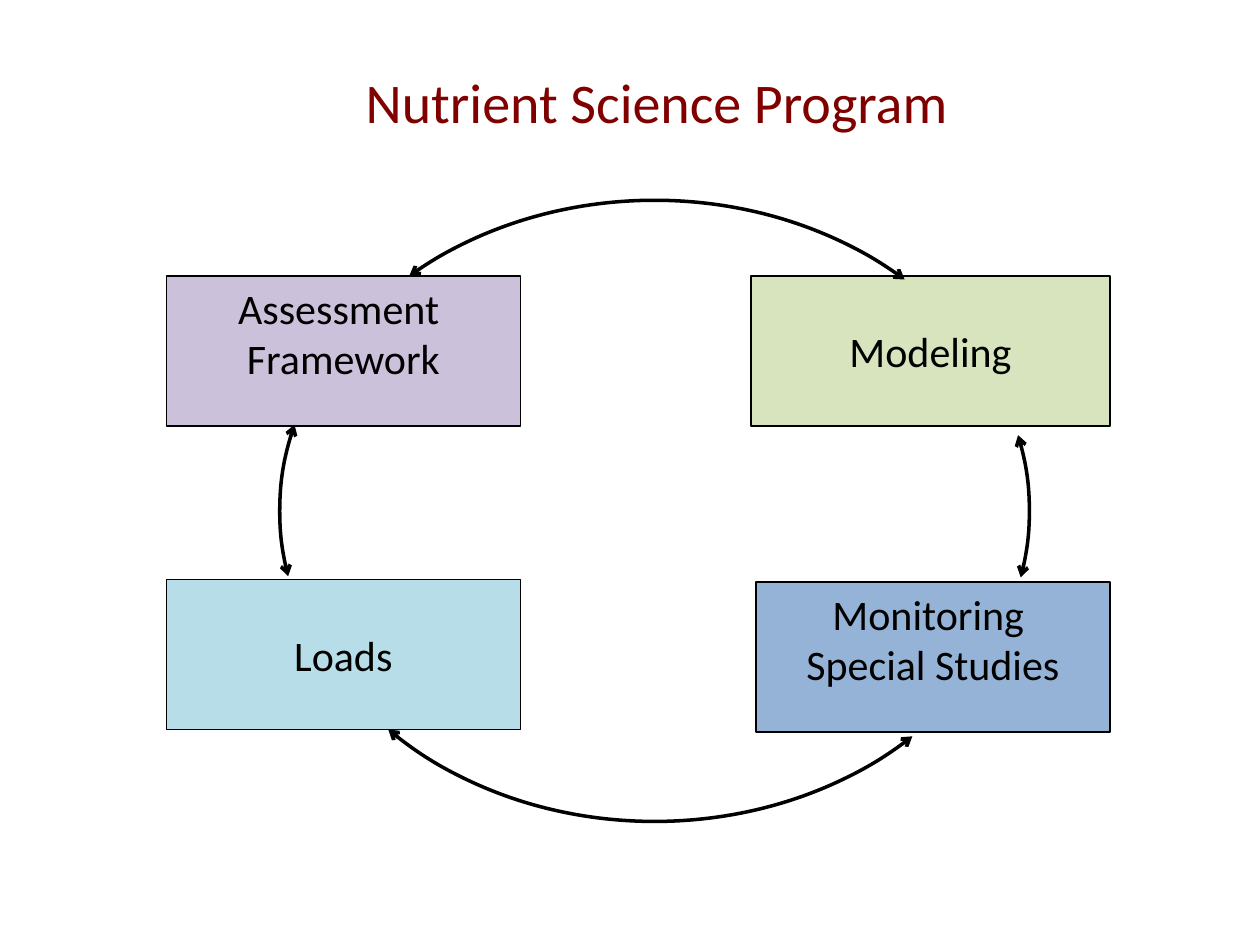
from lxml import etree
from pptx import Presentation
from pptx import util as u
from pptx.dml.color import RGBColor
from pptx.enum import shapes, text
from pptx.oxml import ns

BLACK = RGBColor(0x00, 0x00, 0x00)
MAROON = RGBColor(0x80, 0x00, 0x00)
GREEN = RGBColor(0xD7, 0xE4, 0xBD)
BLUE = RGBColor(0x95, 0xB3, 0xD7)
PURPLE = RGBColor(0xCC, 0xC1, 0xDA)
AQUA = RGBColor(0xB7, 0xDE, 0xE8)

TOP, MIDDLE = text.MSO_ANCHOR.TOP, text.MSO_ANCHOR.MIDDLE
CYCLE = (2.22, 1.59, 5.95, 4.93)
ARROW_ANGLES = [(223.74, 317.22), (348.23, 10.28), (169.89, 193.47), (41.17, 140.61)]


class SlideBuilder:
    """Holds the text style and the current slide, and draws each kind of element."""

    def __init__(self, slide, font="Calibri"):
        self.slide = slide
        self.font = font

    def apply(self, target, values):
        for name, value in values.items():
            setattr(target, name, value)

    def fill_text(self, shape, lines, size, color, anchor=TOP, space_before=0):
        frame = shape.text_frame
        self.apply(frame, {"word_wrap": True, "vertical_anchor": anchor})
        frame.text = "\n".join(lines)
        for paragraph in frame.paragraphs:
            self.apply(paragraph, {"alignment": text.PP_ALIGN.CENTER,
                                   "space_before": u.Pt(space_before)})
            for run in paragraph.runs:
                self.apply(run.font, {"name": self.font, "size": u.Pt(size)})
                run.font.color.rgb = color

    def title(self, box, line):
        shape = self.slide.shapes.add_textbox(*map(u.Inches, box))
        self.fill_text(shape, [line], 32, MAROON)

    def outlined(self, kind, box, width):
        shape = self.slide.shapes.add_shape(kind, *map(u.Inches, box))
        shape.shadow.inherit = False
        shape.line.color.rgb = BLACK
        shape.line.width = u.Pt(width)
        return shape

    def topic(self, box, fill, lines, **layout):
        shape = self.outlined(shapes.MSO_SHAPE.RECTANGLE, box, 0.75)
        shape.fill.solid()
        shape.fill.fore_color.rgb = fill
        self.fill_text(shape, lines, 24, BLACK, **layout)

    def arc_arrow(self, box, angles):
        shape = self.outlined(shapes.MSO_SHAPE.ARC, box, 2)
        shape.fill.background()
        for index, degrees in enumerate(angles):
            shape.adjustments[index] = degrees * 0.6
        line = shape._element.spPr.find(ns.qn("a:ln"))
        for end in ("a:headEnd", "a:tailEnd"):
            etree.SubElement(line, ns.qn(end), type="arrow")


def main():
    presentation = Presentation()
    presentation.slide_width = u.Inches(10)
    presentation.slide_height = u.Inches(7.5)
    builder = SlideBuilder(presentation.slides.add_slide(presentation.slide_layouts[6]))

    builder.title((2.36, 0.49, 5.71, 0.64), "Nutrient Science Program")
    builder.topic((5.96, 2.19, 2.85, 1.19), GREEN, ["Modeling"],
                  anchor=MIDDLE, space_before=5)
    builder.topic((6, 4.62, 2.81, 1.19), BLUE, ["Monitoring ", "Special Studies"])
    builder.topic((1.32, 2.19, 2.81, 1.19), PURPLE, ["Assessment ", "Framework"])
    for angles in ARROW_ANGLES:
        builder.arc_arrow(CYCLE, angles)
    builder.topic((1.32, 4.6, 2.81, 1.19), AQUA, ["Loads"], anchor=MIDDLE)

    presentation.save("out.pptx")


if __name__ == "__main__":
    main()
